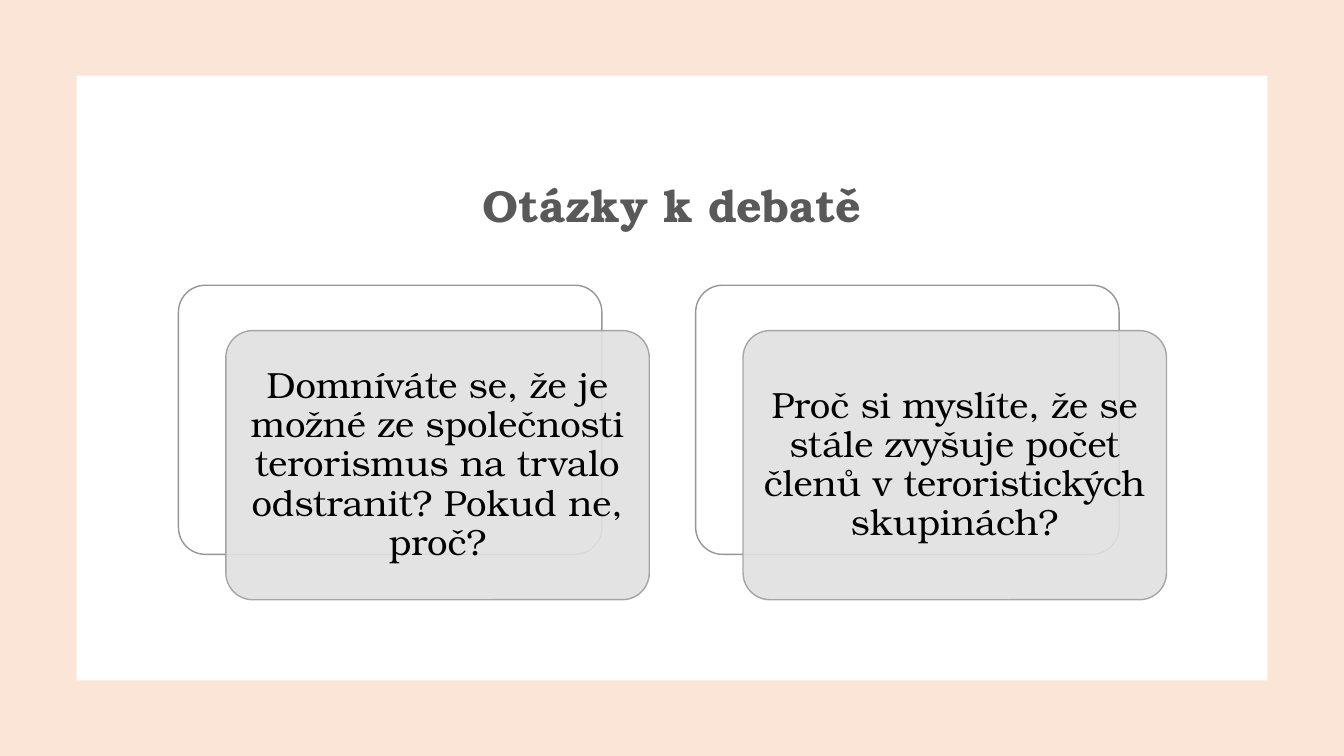
from dataclasses import dataclass

from lxml.etree import SubElement
from pptx import Presentation
from pptx.dml.color import RGBColor
from pptx.enum.shapes import MSO_SHAPE
from pptx.enum.text import MSO_ANCHOR, MSO_AUTO_SIZE, PP_ALIGN
from pptx.oxml.ns import qn
from pptx.shapes.autoshape import Shape
from pptx.slide import Slide
from pptx.text.text import TextFrame
from pptx.util import Inches, Pt

FONT = "TeX Gyre Bonum"
COLORS = {
    "frame": "FBE5D6",
    "paper": "FFFFFF",
    "title": "595959",
    "text": "000000",
    "back_line": "969696",
    "card": "E1E1E1",
    "card_line": "A5A5A5",
}
CARDS_LEFT, CARDS_TOP, CARD_PITCH = 1.77, 2.83, 5.13
CARD_WIDTH, CARD_HEIGHT = 4.2, 2.67
CARD_SHIFT_X, CARD_SHIFT_Y = 0.47, 0.45
TEXT_MARGIN, TEXT_INSET = 0.07, 0.11
QUESTIONS = (
    "Domníváte se, že je možné ze společnosti terorismus na trvalo odstranit? Pokud ne, proč?",
    "Proč si myslíte, že se stále zvyšuje počet členů v teroristických skupinách?",
)


@dataclass(frozen=True)
class Box:
    left: float
    top: float
    width: float
    height: float

    def lengths(self) -> tuple[int, ...]:
        return tuple(Inches(value) for value in (self.left, self.top, self.width, self.height))


@dataclass(frozen=True)
class Panel:
    box: Box
    fill: str
    line: str | None = None
    opacity: int = 100
    kind: MSO_SHAPE = MSO_SHAPE.ROUNDED_RECTANGLE


def color(name: str) -> RGBColor:
    return RGBColor.from_string(COLORS[name])


def draw_panel(slide: Slide, panel: Panel) -> Shape:
    shape = slide.shapes.add_shape(panel.kind, *panel.box.lengths())
    shape.shadow.inherit = False
    shape.fill.solid()
    shape.fill.fore_color.rgb = color(panel.fill)
    if panel.kind == MSO_SHAPE.ROUNDED_RECTANGLE:
        shape.adjustments[0] = 0.1
    if panel.line:
        shape.line.color.rgb = color(panel.line)
        shape.line.width = Pt(1)
    else:
        shape.line.fill.background()
    if panel.opacity < 100:
        fill_color = shape.element.spPr.find(qn("a:solidFill")).find(qn("a:srgbClr"))
        SubElement(fill_color, qn("a:alpha")).set("val", str(panel.opacity * 1000))
    return shape


def write_text(
    frame: TextFrame, text: str, size: int, color_name: str, anchor: MSO_ANCHOR, bold: bool = False
) -> None:
    frame.word_wrap = True
    frame.auto_size = MSO_AUTO_SIZE.NONE
    frame.vertical_anchor = anchor
    paragraph = frame.paragraphs[0]
    paragraph.alignment = PP_ALIGN.CENTER
    paragraph.line_spacing = 0.9
    run = paragraph.add_run()
    run.text = text
    run.font.name = FONT
    run.font.size = Pt(size)
    run.font.bold = bold
    run.font.color.rgb = color(color_name)


def draw_title(slide: Slide, text: str) -> None:
    title = slide.shapes.title
    title.left, title.top, title.width, title.height = Box(1.77, 1.38, 9.8, 0.97).lengths()
    write_text(title.text_frame, text, 32, "title", MSO_ANCHOR.BOTTOM, bold=True)


def draw_background(slide: Slide) -> None:
    backdrops = (
        Panel(Box(0, 0, 13.33, 7.5), "frame", kind=MSO_SHAPE.RECTANGLE),
        Panel(Box(0.76, 0.75, 11.81, 6), "paper", kind=MSO_SHAPE.RECTANGLE),
    )
    for backdrop in backdrops:
        slide.shapes.title.element.addprevious(draw_panel(slide, backdrop).element)


def draw_question(slide: Slide, left: float, question: str) -> None:
    back = Box(left, CARDS_TOP, CARD_WIDTH, CARD_HEIGHT)
    front = Box(left + CARD_SHIFT_X, CARDS_TOP + CARD_SHIFT_Y, CARD_WIDTH, CARD_HEIGHT)
    draw_panel(slide, Panel(back, "paper", "back_line"))
    draw_panel(slide, Panel(front, "card", "card_line", opacity=90))
    text_box = Box(
        front.left + TEXT_MARGIN,
        front.top + TEXT_MARGIN,
        front.width - 2 * TEXT_MARGIN,
        front.height - 2 * TEXT_MARGIN,
    )
    frame = slide.shapes.add_textbox(*text_box.lengths()).text_frame
    frame.margin_left = frame.margin_right = Inches(TEXT_INSET)
    frame.margin_top = frame.margin_bottom = Inches(TEXT_INSET)
    write_text(frame, question, 26, "text", MSO_ANCHOR.MIDDLE)


def main() -> None:
    presentation = Presentation()
    presentation.slide_width = Inches(13.33)
    presentation.slide_height = Inches(7.5)
    slide = presentation.slides.add_slide(presentation.slide_layouts[5])
    draw_background(slide)
    draw_title(slide, "Otázky k debatě")
    for index, question in enumerate(QUESTIONS):
        draw_question(slide, CARDS_LEFT + index * CARD_PITCH, question)
    presentation.save("out.pptx")


if __name__ == "__main__":
    main()
